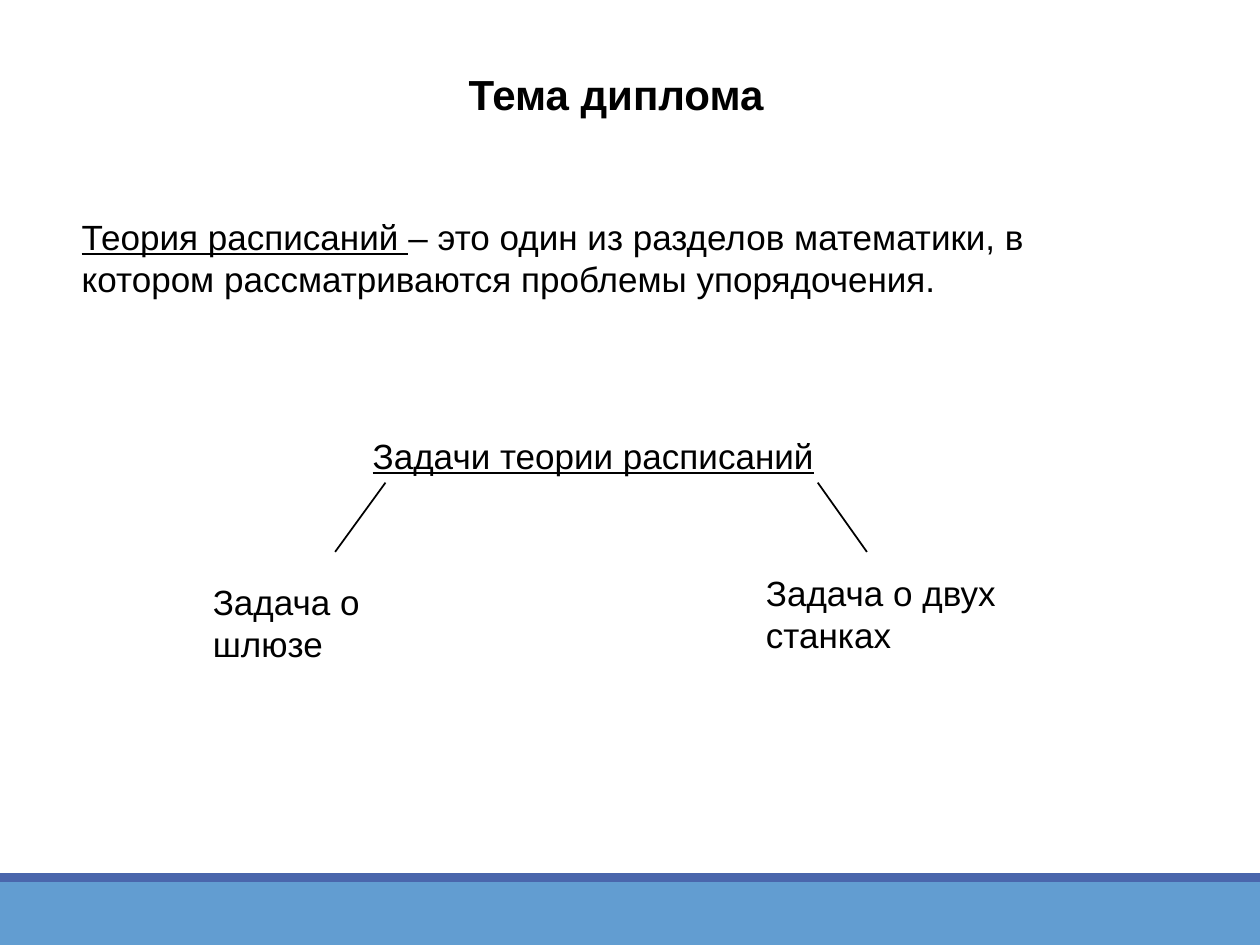
from lxml import etree
from pptx import Presentation
from pptx.dml.color import RGBColor
from pptx.enum.shapes import MSO_CONNECTOR, MSO_SHAPE
from pptx.enum.text import MSO_ANCHOR, PP_ALIGN
from pptx.oxml.ns import qn
from pptx.util import Pt

RECTANGLE = MSO_SHAPE.RECTANGLE
STRAIGHT = MSO_CONNECTOR.STRAIGHT
TOP = MSO_ANCHOR.TOP
LEFT, CENTER = PP_ALIGN.LEFT, PP_ALIGN.CENTER

BLACK = RGBColor(0x00, 0x00, 0x00)
LIGHT_BLUE = RGBColor(0x62, 0x9D, 0xD1)
DARK_BLUE = RGBColor(0x4A, 0x66, 0xAC)

# Content: boxes are left, top, width, height in points
SLIDE_WIDTH, SLIDE_HEIGHT = 720, 540
TITLE = ("Тема диплома", (125.3, 35.3, 453.6, 36))
BODY = {"name": "Arial", "size": Pt(20), "bold": False, "underline": False}
HEADING = {**BODY, "size": Pt(24), "bold": True}
UNDERLINED = {**BODY, "underline": True}

TEXTS = [
    ((39.6, 119.5, 625, 55.4), [
        ("Теория расписаний ", UNDERLINED),
        ("– это один из разделов математики, в котором "
         "рассматриваются проблемы упорядочения.", BODY)]),
    ((205.9, 244.8, 300.2, 31.7), [("Задачи теории расписаний", UNDERLINED)]),
    ((114.5, 328.3, 154.8, 55.4), [("Задача о шлюзе", BODY)]),
    ((430.6, 323.3, 208.8, 55.4), [("Задача о двух станках", BODY)]),
]
FOOTER_BANDS = [(504, 36, LIGHT_BLUE), (499, 5, DARK_BLUE)]  # top, height, colour
BRANCH_TOP, BRANCH_BOTTOM = 275.8, 315.4
BRANCHES = [(467.3, 495.4), (220.3, 191.5)]  # x at top, x at bottom


def place(shape, box):
    names = ("left", "top", "width", "height")
    for name, value in zip(names, box):
        setattr(shape, name, Pt(value))


def write(shape, runs, alignment=LEFT):
    frame = shape.text_frame
    frame.word_wrap = True
    frame.vertical_anchor = TOP
    paragraph = frame.paragraphs[0]
    paragraph.alignment = alignment
    paragraph.space_before = Pt(0)
    for text, font_format in runs:
        run = paragraph.add_run()
        run.text = text
        run.font.color.rgb = BLACK
        for name, value in font_format.items():
            setattr(run.font, name, value)


presentation = Presentation()
presentation.slide_width = Pt(SLIDE_WIDTH)
presentation.slide_height = Pt(SLIDE_HEIGHT)
slide = presentation.slides.add_slide(presentation.slide_layouts[5])
shapes = slide.shapes

# Footer bands
for top, height, colour in FOOTER_BANDS:
    band = shapes.add_shape(RECTANGLE, 0, Pt(top), Pt(SLIDE_WIDTH), Pt(height))
    band.shadow.inherit = False
    band.fill.solid()
    band.fill.fore_color.rgb = colour
    band.line.fill.background()

# Title
title_text, title_box = TITLE
place(shapes.title, title_box)
write(shapes.title, [(title_text, HEADING)], CENTER)

# Definition and task labels
for box, runs in TEXTS:
    write(shapes.add_textbox(*map(Pt, box)), runs)

# Branches from the heading to the two tasks
for top_x, bottom_x in BRANCHES:
    branch = shapes.add_connector(
        STRAIGHT, Pt(top_x), Pt(BRANCH_TOP), Pt(bottom_x), Pt(BRANCH_BOTTOM))
    branch.line.color.rgb = BLACK
    branch.line.width = Pt(1)
    etree.SubElement(branch.element.spPr, qn("a:effectLst"))

presentation.save("out.pptx")
